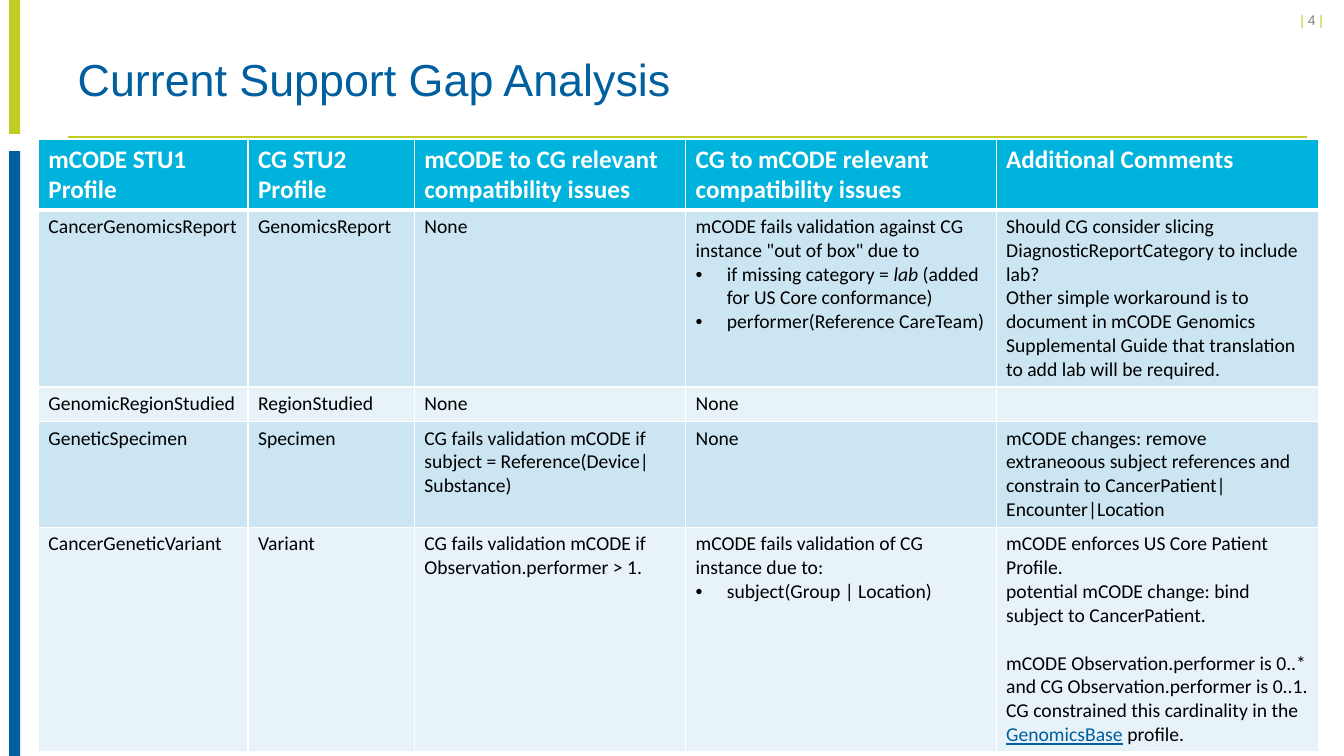
"""Build the Current Support Gap Analysis slide with its profile comparison table."""
from lxml.etree import SubElement
from pptx import Presentation
from pptx.dml.color import RGBColor
from pptx.enum.shapes import MSO_CONNECTOR as Connector, MSO_SHAPE as Shape
from pptx.enum.text import MSO_ANCHOR as Anchor, PP_ALIGN as Align
from pptx.oxml.ns import qn
from pptx.util import Inches, Pt

LIME, NAVY, CYAN, WHITE, BLACK, GREY = "C1CD23", "005F9E", "00B3DC", "FFFFFF", "000000", "808080"
BANDS = ["CCE5F2", "E7F2F9"]
BULLET = "• "
TITLE = "Current Support Gap Analysis"
PAGE_NUMBER = [("| ", LIME), ("4 ", GREY), ("|", LIME)]
SIDE_BARS = [(0, 1.33, LIME), (1.5, 6, NAVY)]
COLUMN_WIDTHS = [2.08, 1.65, 2.69, 3.08, 3.2]
ROW_HEIGHTS = [0.7, 1.76, 0.34, 1.05, 2.23]

HEADERS = ["mCODE STU1 Profile", "CG STU2 Profile", "mCODE to CG relevant compatibility issues",
           "CG to mCODE relevant compatibility issues", "Additional Comments"]
# Each cell is a list of paragraphs, each paragraph a list of (text, style) runs.
PROFILES = [
    [
        [[("CancerGenomicsReport", "")]],
        [[("GenomicsReport", "")]],
        [[("None", "")]],
        [[('mCODE fails validation against CG instance "out of box" due to', "")],
         [(BULLET, ""), ("if missing category = ", ""), ("lab", "italic"),
          (" (added for US Core conformance)", "")],
         [(BULLET, ""), ("performer(Reference CareTeam)", "")]],
        [[("Should CG consider slicing DiagnosticReportCategory to include lab?", "")],
         [("Other simple workaround is to document in mCODE Genomics Supplemental Guide "
           "that translation to add lab will be required.", "")]],
    ],
    [
        [[("GenomicRegionStudied", "")]],
        [[("RegionStudied", "")]],
        [[("None", "")]],
        [[("None", "")]],
        [[]],
    ],
    [
        [[("GeneticSpecimen", "")]],
        [[("Specimen", "")]],
        [[("CG fails validation mCODE if subject = Reference(Device|Substance)", "")]],
        [[("None", "")]],
        [[("mCODE changes: remove extraneoous subject references and constrain to "
           "CancerPatient|Encounter|Location", "")]],
    ],
    [
        [[("CancerGeneticVariant", "")]],
        [[("Variant", "")]],
        [[("CG fails validation mCODE if Observation.performer > 1.", "")]],
        [[("mCODE fails validation of CG instance due to:", "")],
         [(BULLET, ""), ("subject(Group | Location)", "")]],
        [[("mCODE enforces US Core Patient Profile.", "")],
         [("potential mCODE change: bind subject to CancerPatient.", "")],
         [("mCODE Observation.performer is 0..* and CG Observation.performer is 0..1. "
           "CG constrained this cardinality in the ", "gap"),
          ("GenomicsBase", "link"), (" profile.", "")]],
    ],
]


def color(value):
    return RGBColor.from_string(value)


def set_font(font, name, size, value, bold=False):
    font.name, font.size, font.bold = name, Pt(size), bold
    font.color.rgb = color(value)


def add_bullet(paragraph):
    properties = paragraph._p.get_or_add_pPr()
    properties.set("marL", str(Inches(0.31)))
    properties.set("indent", str(-Inches(0.31)))
    SubElement(properties, qn("a:buFont"), typeface="Arial")
    SubElement(properties, qn("a:buChar"), char=BULLET.strip())


def add_borders(cell, is_header):
    properties = cell._tc.get_or_add_tcPr()
    for side in "LRTB":
        width = 3 if is_header and side == "B" else 1
        line = SubElement(properties, qn(f"a:ln{side}"), w=str(Pt(width)))
        fill = SubElement(line, qn("a:solidFill"))
        SubElement(fill, qn("a:srgbClr"), val=WHITE)


def fill_cell(cell, paragraphs, background, size, value, is_header):
    add_borders(cell, is_header)
    cell.fill.solid()
    cell.fill.fore_color.rgb = color(background)
    for index, runs in enumerate(paragraphs):
        frame = cell.text_frame
        paragraph = frame.add_paragraph() if index else frame.paragraphs[0]
        if runs and runs[0][0] == BULLET:
            add_bullet(paragraph)
            runs = runs[1:]
        set_font(paragraph.font, "Calibri", size, value, is_header)
        for text, style in runs:
            run = paragraph.add_run()
            run.text = text
            if style == "italic":
                run.font.italic = True
            elif style == "link":
                run.font.underline = True
                run.font.color.rgb = color(NAVY)
            elif style == "gap":
                paragraph.space_before = Pt(17)
        if not runs:
            SubElement(paragraph._p, qn("a:endParaRPr"), sz=str(size * 100))


def add_frame(slide):
    for top, height, value in SIDE_BARS:
        bar = slide.shapes.add_shape(Shape.RECTANGLE, Inches(0.09), Inches(top), Inches(0.11), Inches(height))
        bar.shadow.inherit = False
        bar.fill.solid()
        bar.fill.fore_color.rgb = color(value)
        bar.line.fill.background()
    rule = slide.shapes.add_connector(Connector.STRAIGHT, Inches(0.67), Inches(1.36), Inches(12.96), Inches(1.36))
    rule.line.color.rgb = color(LIME)
    rule.line.width = Pt(1)
    SubElement(rule._element.spPr, qn("a:effectLst"))

    number = slide.shapes.add_textbox(Inches(10.88), Inches(0.07), Inches(2.34), Inches(0.27))
    number.text_frame.word_wrap = True
    paragraph = number.text_frame.paragraphs[0]
    paragraph.alignment = Align.RIGHT
    paragraph.space_after = Pt(6)
    for text, value in PAGE_NUMBER:
        run = paragraph.add_run()
        run.text = text
        set_font(run.font, "Arial", 10, value)


def add_title(slide):
    title = slide.shapes.title
    title.left, title.top, title.width, title.height = map(Inches, (0.67, 0.4, 12.29, 0.82))
    title.text_frame.text = TITLE
    title.text_frame.vertical_anchor = Anchor.MIDDLE
    paragraph = title.text_frame.paragraphs[0]
    paragraph.alignment = Align.LEFT
    paragraph.line_spacing = 0.9
    set_font(paragraph.font, "Arial", 32, NAVY)


def add_profile_table(slide):
    table = slide.shapes.add_table(
        len(ROW_HEIGHTS), len(COLUMN_WIDTHS), Inches(0.38), Inches(1.38),
        Inches(sum(COLUMN_WIDTHS)), Inches(sum(ROW_HEIGHTS))).table
    for column, width in zip(table.columns, COLUMN_WIDTHS):
        column.width = Inches(width)
    for row, height in zip(table.rows, ROW_HEIGHTS):
        row.height = Inches(height)
    for column, header in enumerate(HEADERS):
        fill_cell(table.cell(0, column), [[(header, "")]], CYAN, 18, WHITE, True)
    for row, profile in enumerate(PROFILES):
        for column, paragraphs in enumerate(profile):
            fill_cell(table.cell(row + 1, column), paragraphs, BANDS[row % 2], 14, BLACK, False)


def main():
    presentation = Presentation()
    presentation.slide_width, presentation.slide_height = Inches(13.33), Inches(7.5)
    slide = presentation.slides.add_slide(presentation.slide_layouts[5])
    add_frame(slide)
    add_title(slide)
    add_profile_table(slide)
    presentation.save("out.pptx")


if __name__ == "__main__":
    main()
